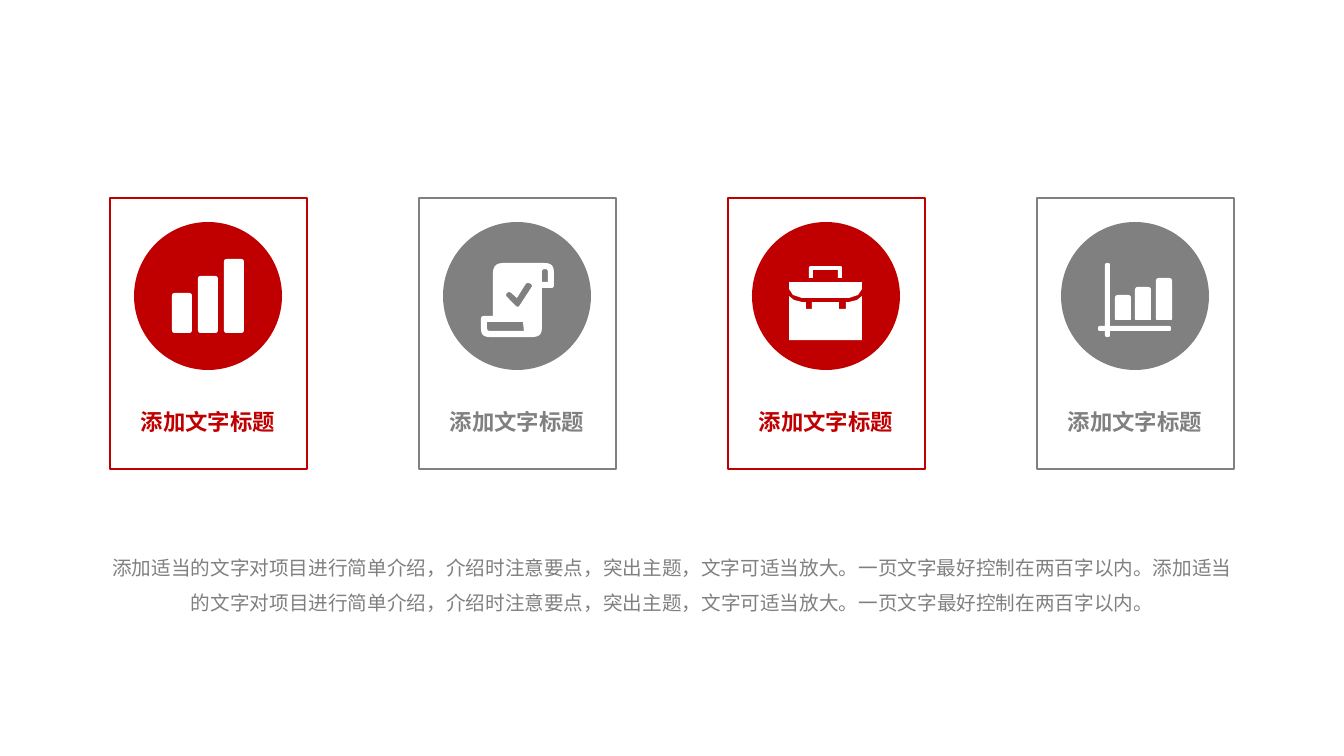
import math
from dataclasses import dataclass

from lxml import etree
from pptx import Presentation
from pptx import util as u
from pptx.dml.color import RGBColor
from pptx.enum import shapes, text
from pptx.oxml.ns import qn

PX = 914400 / 100.8


@dataclass(frozen=True)
class Theme:
    """Colours, font and type sizes of the slide."""
    red: str = "C00000"
    grey: str = "808080"
    white: str = "FFFFFF"
    font: str = "Noto Sans CJK SC"
    label: int = 16
    body: int = 14


T = Theme()


def px(n):
    """Turn pixels into EMU."""
    return u.Emu(round(n * PX))


def rgb(color):
    """Turn a hex string into a colour."""
    return RGBColor.from_string(color)


def bar(x, y, w, bottom, top_r, base_r):
    """Return the outline of an upright bar with rounded corners."""
    return [(x, y, top_r), (x + w, y, top_r),
            (x + w, bottom, base_r), (x, bottom, base_r)]


BARS = [bar(38 + 26 * i, 71 - 17 * i, 20, 111, 3, 3) for i in range(3)]
SCROLL = [
    [(50, 41, 10), (111, 41, 9), (111, 66, 3), (99, 66),
     (99, 115, 9), (38, 115, 8), (38, 94, 3), (50, 94)],
    [(44, 100), (80, 100), (81, 109), (44, 109, 3)],
    [(84, 60, 3), (90, 63, 3), (75, 86, 3), (62, 73, 3), (66, 69, 3), (74, 76)],
    [(99, 60), (99, 47, 3), (105, 47, 3), (105, 60)],
]
BRIEFCASE = [
    [(37, 74), (42, 78), (50, 80), (54, 80), (54, 87), (60, 87), (60, 80),
     (87, 80), (87, 87), (94, 87), (94, 80), (97, 80), (105, 78), (110, 74),
     (110, 118), (37, 118)],
    [(37, 60), (110, 60), (110, 67), (106, 73), (97, 76),
     (50, 76), (41, 73), (37, 67)],
    [(57, 56), (57, 44, 2), (90, 44, 2), (90, 56),
     (86, 56), (86, 48), (61, 48), (61, 56)],
]
CHART = [bar(54 + 41 * i // 2, 73 - 17 * i // 2, 16, 98, 3, 1) for i in range(3)]
CHART.append([
    (44, 41, 2), (49, 41, 2), (49, 104), (110, 104, 2), (110, 109, 2), (49, 109),
    (49, 115, 2), (44, 115, 2), (44, 109), (37, 109, 2), (37, 104, 2), (44, 104)])


def paint(sp, fill=None, line=None):
    """Give a shape its fill and line, without a shadow."""
    sp.shadow.inherit = False
    if fill:
        sp.fill.solid()
        sp.fill.fore_color.rgb = rgb(fill)
    else:
        sp.fill.background()
    if line:
        sp.line.color.rgb = rgb(line)
        sp.line.width = u.Pt(1)
    else:
        sp.line.fill.background()


def add_shape(s, kind, x, y, w, h, **look):
    """Place a preset shape."""
    sp = s.shapes.add_shape(kind, px(x), px(y), px(w), px(h))
    paint(sp, **look)


def add_text(s, x, y, w, h, words, size, color, bold=False, wrap=True, spacing=None):
    """Place a centred text box."""
    tf = s.shapes.add_textbox(px(x), px(y), px(w), px(h)).text_frame
    tf.word_wrap = wrap
    tf.auto_size = text.MSO_AUTO_SIZE.SHAPE_TO_FIT_TEXT
    p = tf.paragraphs[0]
    p.alignment = text.PP_ALIGN.CENTER
    p.line_spacing = spacing
    r = p.add_run()
    r.text = words
    r.font.size = u.Pt(size)
    r.font.bold = bold
    r.font.color.rgb = rgb(color)
    r.font.name = T.font
    etree.SubElement(r.font._element, qn("a:ea"), typeface=T.font)


def round_corners(corners):
    """Replace each corner that has a radius by points on a curve."""
    points = []
    for i, (x, y, *radius) in enumerate(corners):
        if not radius:
            points.append((x, y))
            continue
        ends = []
        for nx, ny, *_ in (corners[i - 1], corners[(i + 1) % len(corners)]):
            k = radius[0] / math.hypot(nx - x, ny - y)
            ends.append((x + k * (nx - x), y + k * (ny - y)))
        (ax, ay), (bx, by) = ends
        for t in (0, 0.2, 0.4, 0.6, 0.8, 1):
            a, m, b = (1 - t) ** 2, 2 * t * (1 - t), t * t
            points.append((a * ax + m * x + b * bx, a * ay + m * y + b * by))
    return points


def add_icon(s, x, y, contours):
    """Draw a white icon on the disc whose corner is at x, y."""
    fb = None
    for contour in contours:
        points = [(px(x + dx), px(y + dy)) for dx, dy in round_corners(contour)]
        if fb is None:
            fb = s.shapes.build_freeform(*points[0])
        else:
            fb.move_to(*points[0])
        fb.add_line_segments(points[1:], close=True)
    paint(fb.convert_to_shape(), fill=T.white)


def add_card(s, x, y, w, h, icon, color):
    """Place a framed card with a disc, an icon and a label."""
    disc = w - 49
    add_shape(s, shapes.MSO_SHAPE.RECTANGLE, x, y, w, h, line=color)
    add_shape(s, shapes.MSO_SHAPE.OVAL, x + 24, y + 24, disc, disc, fill=color)
    add_icon(s, x + 24, y + 24, icon)
    add_text(s, x + 20, y + 205, w - 41, 37, "添加文字标题",
             T.label, color, bold=True, wrap=False)


def add_cards(s, x, y, pitch):
    """Place the row of cards in alternating colours."""
    for i, icon in enumerate((BARS, SCROLL, BRIEFCASE, CHART)):
        add_card(s, x + i * pitch, y, 197, 271, icon, (T.red, T.grey)[i % 2])


def add_intro(s, x, y, w, h):
    """Place the paragraph below the cards."""
    sentence = ("添加适当的文字对项目进行简单介绍，介绍时注意要点，突出主题，"
                "文字可适当放大。一页文字最好控制在两百字以内。")
    add_text(s, x, y, w, h, sentence * 2, T.body, T.grey, spacing=1.5)


def main():
    """Build the slide and save it."""
    prs = Presentation()
    prs.slide_width, prs.slide_height = px(1344), px(756)
    s = prs.slides.add_slide(prs.slide_layouts[6])
    add_cards(s, 110, 198, 309)
    add_intro(s, 93, 539, 1159, 78)
    prs.save("out.pptx")


if __name__ == "__main__":
    main()
